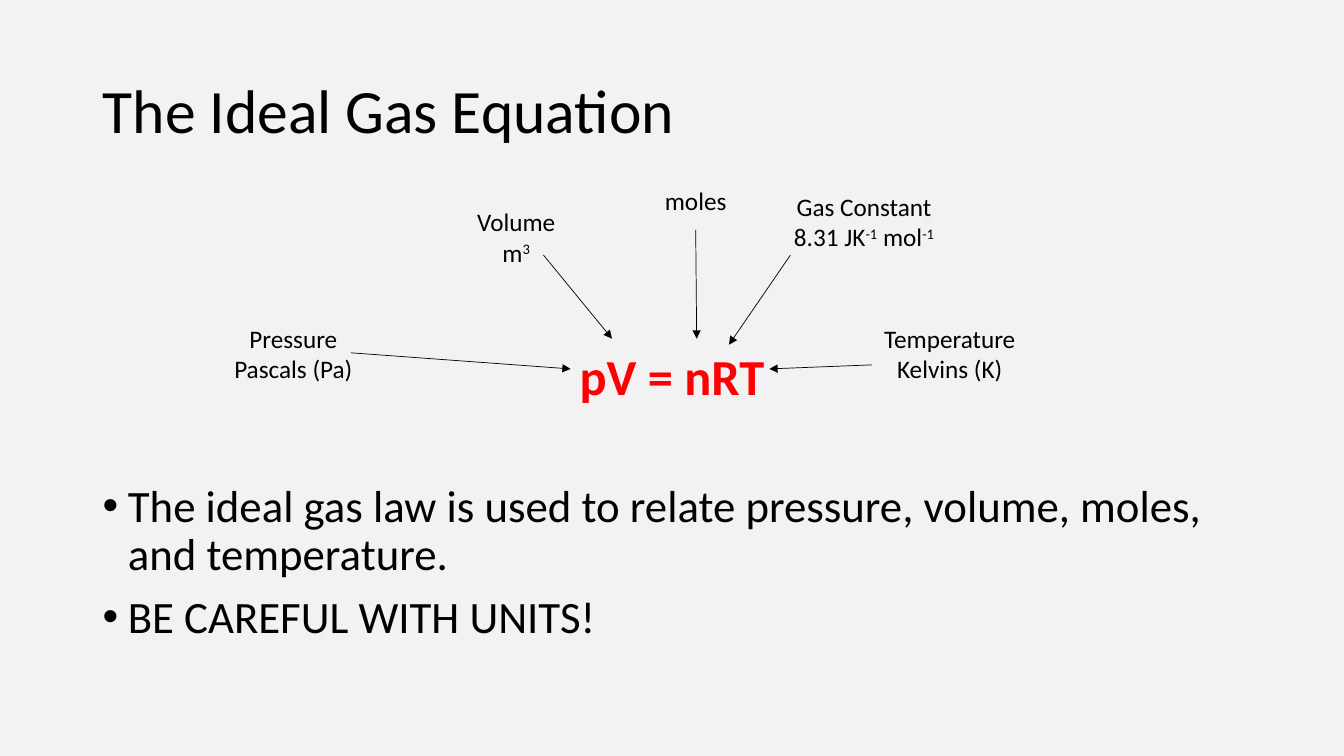
from lxml import etree
from pptx import Presentation
from pptx.dml.color import RGBColor
from pptx.enum.shapes import MSO_CONNECTOR
from pptx.enum.text import MSO_ANCHOR, PP_ALIGN
from pptx.oxml.ns import qn
from pptx.util import Inches, Pt

LEFT, CENTER = PP_ALIGN.LEFT, PP_ALIGN.CENTER
TOP, MIDDLE = MSO_ANCHOR.TOP, MSO_ANCHOR.MIDDLE
STRAIGHT = MSO_CONNECTOR.STRAIGHT

# Content: a pair of ^ marks encloses a superscript
TITLE = "The Ideal Gas Equation"
EQUATION = "pV = nRT"
BULLETS = [
    "The ideal gas law is used to relate pressure, volume, moles, and temperature.",
    "BE CAREFUL WITH UNITS!",
]
# Label lines, (left, top, width), arrow start, arrow end
LABELS = [
    (["Pressure Pascals (Pa)"], (2.06, 3.16, 1.7), (3.48, 3.5), (5.66, 3.66)),
    (["Volume", "m^3^"], (4.27, 2, 1.7), (5.39, 2.53), (6.07, 3.36)),
    (["moles"], (6.05, 1.79, 1.7), (6.9, 2.28), (6.91, 3.36)),
    (["Gas Constant", "8.31 JK^-1^ mol^-1^"], (7.63, 1.85, 1.88), (7.84, 2.53), (7.23, 3.42)),
    (["Temperature Kelvins (K)"], (8.57, 3.16, 1.7), (8.65, 3.62), (7.63, 3.66)),
]

# Layout and style
WIDTH, HEIGHT = 13.33, 7.5
MARGIN = 0.92
CONTENT_WIDTH = WIDTH - 2 * MARGIN
LABEL_HEIGHT = 0.71
FONT = "Calibri"
COLORS = {"background": "F2F2F2", "text": "000000", "equation": "FF0000"}

presentation = Presentation()
presentation.slide_width, presentation.slide_height = Inches(WIDTH), Inches(HEIGHT)
slide = presentation.slides.add_slide(presentation.slide_layouts[6])
slide.background.fill.solid()
slide.background.fill.fore_color.rgb = RGBColor.from_string(COLORS["background"])


def add_text(lines, left, top, width, height, size=18, color="text", bold=False,
             align=LEFT, anchor=TOP, line_spacing=1.0, gap=0, bullet=False):
    box = slide.shapes.add_textbox(Inches(left), Inches(top), Inches(width), Inches(height))
    frame = box.text_frame
    frame.word_wrap = True
    frame.vertical_anchor = anchor
    for index, line in enumerate(lines):
        paragraph = frame.add_paragraph() if index else frame.paragraphs[0]
        paragraph.alignment = align
        paragraph.line_spacing = line_spacing
        paragraph.space_before = Pt(gap if index else 0)
        if bullet:
            properties = paragraph._p.get_or_add_pPr()
            properties.set("marL", str(Inches(0.25)))
            properties.set("indent", str(-Inches(0.25)))
            etree.SubElement(properties, qn("a:buFont"), typeface="Arial")
            etree.SubElement(properties, qn("a:buChar"), char="•")
        for position, part in enumerate(line.split("^")):
            if not part:
                continue
            run = paragraph.add_run()
            run.text = part
            run.font.name, run.font.size, run.font.bold = FONT, Pt(size), bold
            run.font.color.rgb = RGBColor.from_string(COLORS[color])
            if position % 2:
                run.font._element.set("baseline", "30000")


def add_arrow(start, end):
    points = [Inches(value) for value in (*start, *end)]
    connector = slide.shapes.add_connector(STRAIGHT, *points)
    connector.line.width = Pt(0.5)
    connector.line.color.rgb = RGBColor.from_string(COLORS["text"])
    etree.SubElement(connector.line._get_or_add_ln(), qn("a:tailEnd"), type="triangle")
    etree.SubElement(connector._element.spPr, qn("a:effectLst"))


# Title
add_text([TITLE], MARGIN, 0.4, CONTENT_WIDTH, 1.45, size=44, anchor=MIDDLE, line_spacing=0.9)

# Equation
add_text([EQUATION], MARGIN, 3.37, CONTENT_WIDTH, 0.7, size=36, color="equation",
         bold=True, align=CENTER)

# Labels with arrows to the symbols
for lines, (left, top, width), start, end in LABELS:
    add_text(lines, left, top, width, LABEL_HEIGHT, align=CENTER)
    add_arrow(start, end)

# Bullets
add_text(BULLETS, MARGIN, 4.75, CONTENT_WIDTH, 2, size=32, line_spacing=0.9, gap=10, bullet=True)

presentation.save("out.pptx")
